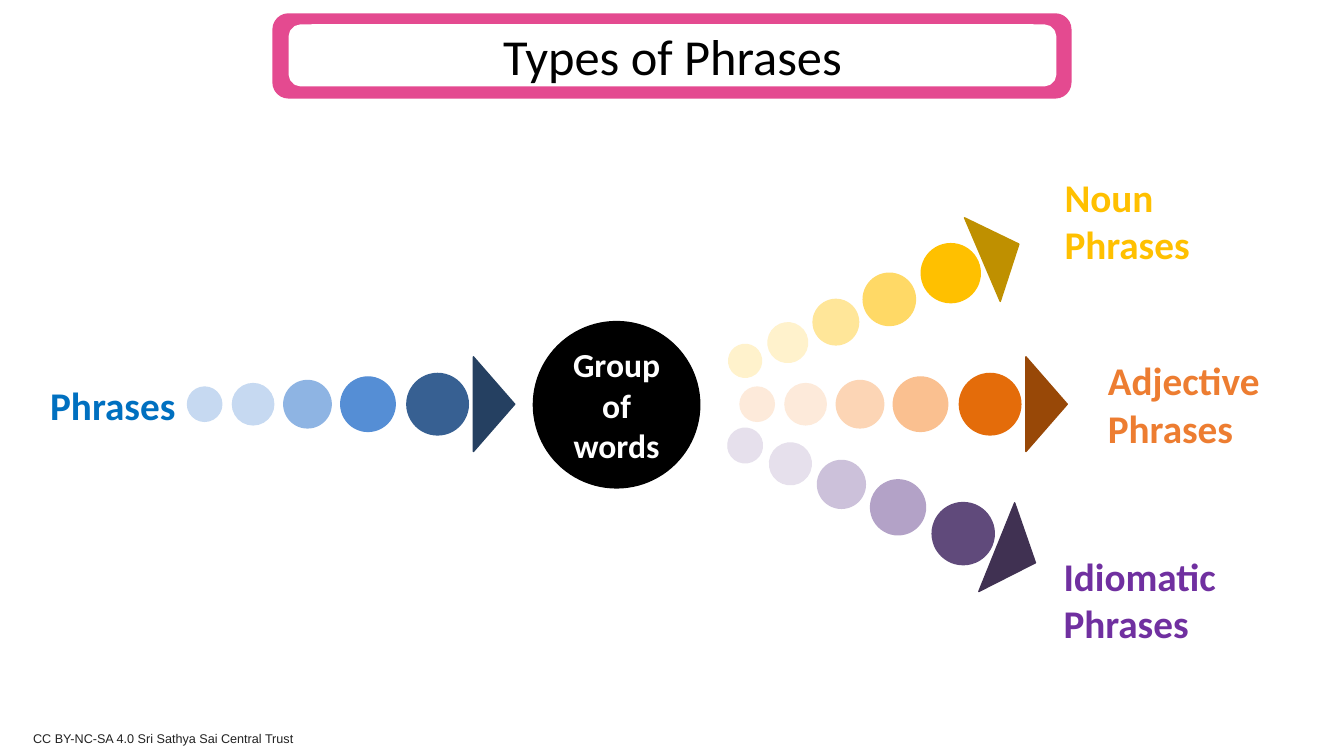
from math import cos, radians, sin

from pptx import Presentation
from pptx.dml.color import RGBColor
from pptx.enum.shapes import MSO_SHAPE as Shape
from pptx.enum.text import MSO_ANCHOR as Anchor, MSO_AUTO_SIZE as Fit, PP_ALIGN as Align
from pptx.util import Pt

PX = 9144  # 100 px to the inch

# Along a trail: distance of each dot from the first, and its diameter
DOTS = [(0, 34), (48, 41), (102, 47), (162, 54), (231, 61)]
TIP, TIP_W, TIP_H = 287, 94, 41

# Start x and y, angle, scale, then the colours of five dots and the tip
TRAILS = [
    (203, 401, 0, 1, "C6D9F1 C6D9F1 8EB4E3 558ED5 376092 254061"),
    (751, 401, 0, 1, "FDEADA FDEADA FCD5B5 FAC090 E46C0A 984807"),
    (739, 358, -23.1, 0.96, "FFF2CC FFF2CC FFE699 FFD966 FFC000 BF9000"),
    (739, 442, 22, 1.01, "E6E0EC E6E0EC CCC1DA B3A2C7 604A7B 403152"),
]
LABELS = [
    ((1046, 167, 146, 104), "FFC000", ["Noun", "Phrases"]),
    ((1089, 349, 173, 104), "ED7D31", ["Adjective", "Phrases"]),
    ((1045, 543, 173, 104), "7030A0", ["Idiomatic", "Phrases"]),
    ((40, 373, 146, 57), "0070C0", ["Phrases"]),
]


def emu(box):
    return [round(v * PX) for v in box]


def paint(color, code):
    color.rgb = RGBColor.from_string(code)


def write(frame, lines, size, code, bold=False, face="Calibri", align=Align.LEFT):
    for i, line in enumerate(lines):
        para = frame.paragraphs[0] if i == 0 else frame.add_paragraph()
        para.text = line
        para.alignment = align
        font = para.font
        font.name, font.size, font.bold = face, Pt(size), bold
        paint(font.color, code)


def solid(parent, kind, box, code, line=1):
    """Add a preset shape whose fill and outline share one colour."""
    shape = parent.shapes.add_shape(kind, *emu(box))
    shape.shadow.inherit = False
    shape.fill.solid()
    paint(shape.fill.fore_color, code)
    paint(shape.line.color, code)
    shape.line.width = Pt(line)
    return shape


def center(shape, text, size, code, bold=False):
    frame = shape.text_frame
    frame.word_wrap = True
    frame.vertical_anchor = Anchor.MIDDLE
    write(frame, [text], size, code, bold, align=Align.CENTER)


def label(slide, box, lines, size, code, wrap=False, **style):
    frame = slide.shapes.add_textbox(*emu(box)).text_frame
    frame.word_wrap = wrap
    frame.auto_size = Fit.SHAPE_TO_FIT_TEXT
    write(frame, lines, size, code, **style)


def banner(slide, box, text):
    x, y, w, h = box
    group = slide.shapes.add_group_shape()
    solid(group, Shape.ROUNDED_RECTANGLE, box, "E44A90", 4)
    solid(group, Shape.ROUNDED_RECTANGLE, (x + 16, y + 11, w - 31, h - 23), "FFFFFF", 4)
    plate = solid(group, Shape.RECTANGLE, (x + 37, y + 11, w - 73, h - 23), "FFFFFF", 4)
    center(plate, text, 36, "000000")


def trail(slide, x, y, angle, scale, codes):
    """Growing dots that run from (x, y) at an angle and end in a triangle."""
    group = slide.shapes.add_group_shape()
    parts = [(Shape.OVAL, d, size, size, 0) for d, size in DOTS]
    parts.append((Shape.ISOSCELES_TRIANGLE, TIP, TIP_W, TIP_H, 90))
    turn = radians(angle)
    for (kind, dist, w, h, spin), code in zip(parts, codes.split()):
        cx = x + dist * scale * cos(turn)
        cy = y + dist * scale * sin(turn)
        w, h = w * scale, h * scale
        part = solid(group, kind, (cx - w / 2, cy - h / 2, w, h), code)
        part.rotation = angle + spin


def phrases(prs):
    slide = prs.slides.add_slide(prs.slide_layouts[6])
    label(slide, (23, 720, 667, 25), ["CC BY-NC-SA 4.0 Sri Sathya Sai Central Trust"],
          9, "222222", wrap=True, face="Arial")
    banner(slide, (273, 16, 787, 79), "Types of Phrases")
    hub = solid(slide, Shape.OVAL, (529, 319, 165, 165), "000000")
    center(hub, "Group of words", 24, "FFFFFF", bold=True)
    for row in TRAILS:
        trail(slide, *row)
    for box, code, lines in LABELS:
        label(slide, box, lines, 28, code, bold=True)


def main():
    prs = Presentation()
    prs.slide_width, prs.slide_height = emu((1333, 750))
    phrases(prs)
    prs.save("out.pptx")


if __name__ == "__main__":
    main()
